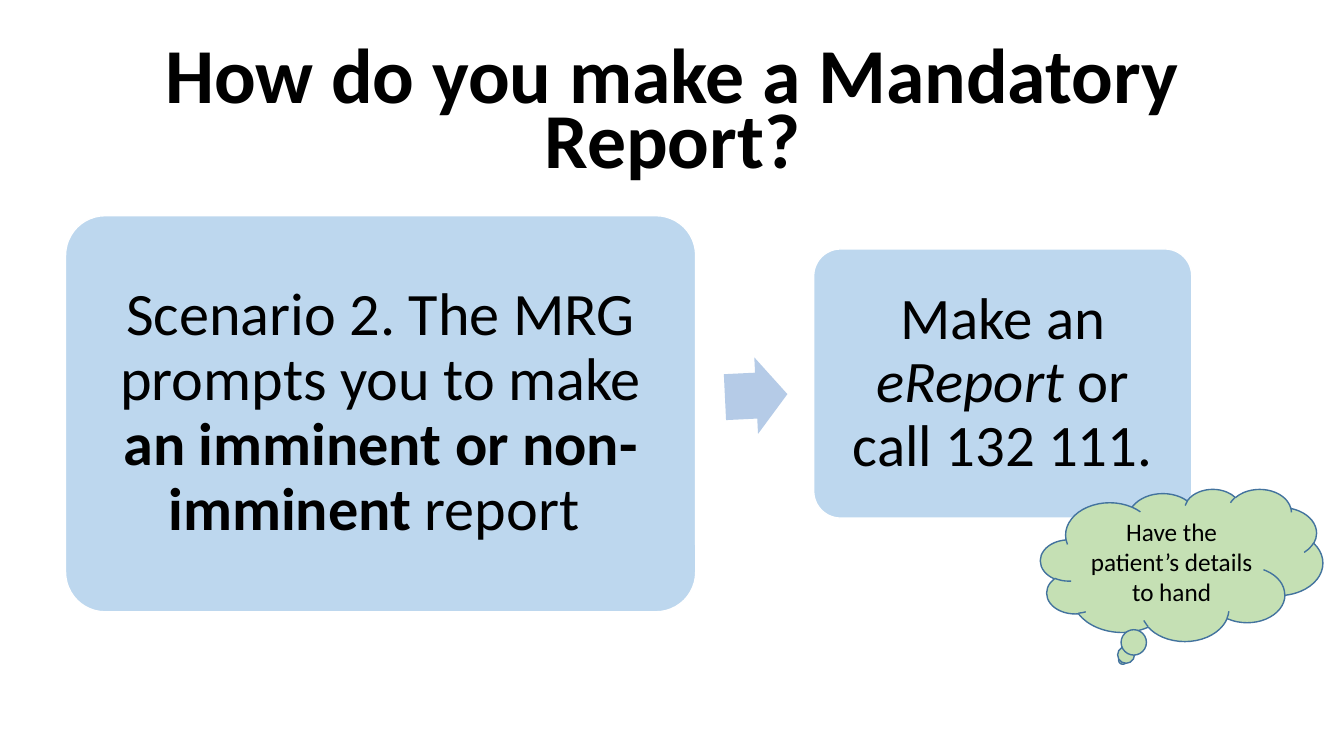
from pptx import Presentation
from pptx.dml.color import RGBColor
from pptx.enum import shapes, text
from pptx.util import Inches, Pt


def color(hex_value):
    """Turn a hex string into a colour."""
    return RGBColor.from_string(hex_value)


def write(frame, runs, size, bold=False, spacing=1.0, inset=(0.1, 0.05),
          anchor=text.MSO_ANCHOR.MIDDLE):
    """Fill a frame with one centred paragraph of (words, style) runs."""
    frame.word_wrap = True
    frame.auto_size = text.MSO_AUTO_SIZE.NONE
    frame.vertical_anchor = anchor
    frame.margin_left = frame.margin_right = Inches(inset[0])
    frame.margin_top = frame.margin_bottom = Inches(inset[1])
    paragraph = frame.paragraphs[0]
    paragraph.alignment = text.PP_ALIGN.CENTER
    paragraph.line_spacing = spacing
    for words, style in runs:
        run = paragraph.add_run()
        run.text = words
        run.font.name = "Calibri"
        run.font.size = Pt(size)
        run.font.bold = bold or style == "bold"
        run.font.italic = style == "italic"
        run.font.color.rgb = color("000000")


def add_figure(slide, kind, box, fill, line=None):
    """Add a flat preset shape in the given box."""
    figure = slide.shapes.add_shape(kind, *map(Inches, box))
    figure.shadow.inherit = False
    figure.fill.solid()
    figure.fill.fore_color.rgb = color(fill)
    if line:
        figure.line.color.rgb = color(line)
        figure.line.width = Pt(1)
    else:
        figure.line.fill.background()
    return figure


def add_heading(slide, box):
    """Place and format the slide title."""
    heading = slide.shapes.title
    heading.left, heading.top, heading.width, heading.height = map(Inches, box)
    write(heading.text_frame, [("How do you make a Mandatory Report?", None)],
          55.5, bold=True, spacing=0.7, anchor=text.MSO_ANCHOR.BOTTOM)


def add_step(slide, box, runs, size, inset):
    """Add one rounded step of the process."""
    step = add_figure(slide, shapes.MSO_SHAPE.ROUNDED_RECTANGLE, box,
                      "BDD7EE", "FFFFFF")
    step.adjustments[0] = 0.1
    write(step.text_frame, runs, size, spacing=0.9, inset=(inset, inset))


def add_process(slide, box):
    """Add the scenario, the arrow and the action, centred on one axis."""
    left, top, width, height = box
    middle = top + height / 2
    action_width, action_height = 3.75, 2.67
    arrow_width, arrow_height = 0.62, 0.76
    add_step(slide, (left, top, 6.25, height), [
        ("Scenario 2. The MRG prompts you to make ", None),
        ("an imminent or non-imminent\u00a0", "bold"),
        ("report ", None)], 43, 0.18)
    arrow = add_figure(slide, shapes.MSO_SHAPE.RIGHT_ARROW,
                       (left + 6.54, middle - 0.18 - arrow_height / 2 + 0.0,
                        arrow_width, arrow_height), "B5CBE7")
    arrow.adjustments[0] = 0.6
    arrow.rotation = 357.2
    add_step(slide, (left + width - action_width, middle - 0.3 - action_height / 2,
                     action_width, action_height), [
        ("Make an ", None),
        ("eReport", "italic"),
        (" or call 132 111.", None)], 42, 0.17)


def add_reminder(slide, box):
    """Add the thought cloud with the reminder."""
    reminder = add_figure(slide, shapes.MSO_SHAPE.CLOUD_CALLOUT, box,
                          "C5E0B4", "43739E")
    write(reminder.text_frame, [("Have the patient’s details to hand", None)], 18)


def main():
    """Build and save the slide."""
    deck = Presentation()
    deck.slide_width, deck.slide_height = Inches(13.33), Inches(7.5)
    slide = deck.slides.add_slide(deck.slide_layouts[5])
    add_process(slide, (0.65, 2.14, 11.17, 3.93))
    add_heading(slide, (0.92, 0.4, 11.5, 1.45))
    add_reminder(slide, (10.32, 4.85, 2.8, 1.51))
    deck.save("out.pptx")


if __name__ == "__main__":
    main()
